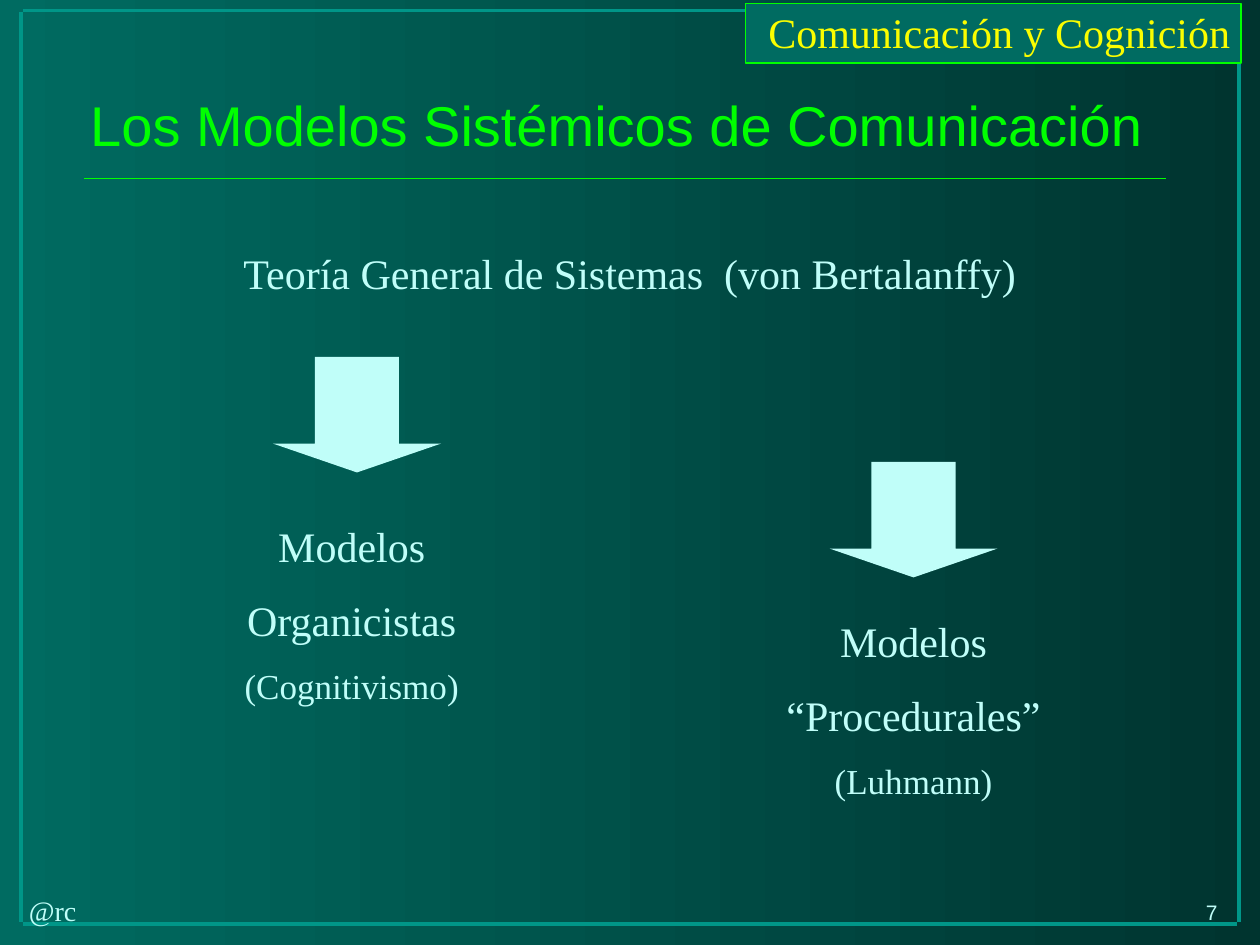
import pptx
import pptx.dml.color
import pptx.enum.shapes
import pptx.enum.text
import pptx.oxml
import pptx.oxml.ns
import pptx.util

Pt = pptx.util.Pt
ALIGN = pptx.enum.text.PP_ALIGN
SHAPES = pptx.enum.shapes.MSO_SHAPE

TEAL, DARK, FRAME = "006B61", "00342F", "009688"
PALE, GREEN, YELLOW = "C0FEF9", "00FF00", "FAFD00"
SERIF, SANS = "Times New Roman", "Arial"

TITLE = "Los Modelos Sistémicos de Comunicación "
THEORY = "Teoría General de Sistemas  (von Bertalanffy)"
BANNER = "Comunicación y Cognición"

# Left, top, width, height of each text
TITLE_BOX = (36, 48, 642, 90)
THEORY_BOX = (84, 138, 552, 36)
BANNER_BOX = (432, 0, 291, 36)
BANNER_PANEL = (426, 2, 283, 34)

# Lines of text, text box, left and top of the arrow
MODELS = [
    ([("Modelos", 24), ("“Procedurales”", 24), ("(Luhmann)", 20)],
     (438, 348, 168, 115), (474, 264)),
    ([("Modelos", 24), ("Organicistas", 24), ("(Cognitivismo)", 20)],
     (108, 294, 186, 115), (156, 204)),
]
ARROW_SIZE = (96, 66)

# Text, box, size, font
FOOTERS = [
    ("7", (682, 510.5, 35, 22), 12, SANS),
    ("@rc", (9.5, 507, 42, 26), 16, SERIF),
]

# Start x, start y, end x, end y, colour, weight
LINES = [
    (12, 7, 12, 527, FRAME, 2),
    (13, 528, 707, 528, FRAME, 2),
    (13, 6, 707, 6, FRAME, 2),
    (708, 7, 708, 527, FRAME, 2),
    (48, 102, 666, 102, GREEN, 1),
]


def color(hex_text):
    return pptx.dml.color.RGBColor.from_string(hex_text)


def points(values):
    return [Pt(value) for value in values]


def set_font(paragraph, size, name, hex_text):
    paragraph.font.size = Pt(size)
    paragraph.font.name = name
    paragraph.font.color.rgb = color(hex_text)


def add_text(slide, box, lines, name=SERIF, hex_text=PALE,
             alignment=ALIGN.LEFT, wrap=True):
    """Add a text box from (text, size) lines, spaced by half a line."""
    frame = slide.shapes.add_textbox(*points(box)).text_frame
    frame.word_wrap = wrap
    for index, (text, size) in enumerate(lines):
        paragraph = frame.add_paragraph() if index else frame.paragraphs[0]
        paragraph.text = text
        paragraph.alignment = alignment
        if index:
            paragraph.space_before = Pt(round(size * 0.56, 1))
        set_font(paragraph, size, name, hex_text)


def add_shape(slide, kind, box, fill):
    shape = slide.shapes.add_shape(kind, *points(box))
    shape.shadow.inherit = False
    shape.fill.solid()
    shape.fill.fore_color.rgb = color(fill)
    shape.line.fill.background()
    return shape


def add_line(slide, ends, hex_text, weight):
    line = slide.shapes.add_connector(
        pptx.enum.shapes.MSO_CONNECTOR.STRAIGHT, *points(ends))
    line.line.color.rgb = color(hex_text)
    line.line.width = Pt(weight)
    line._element.spPr.append(
        pptx.oxml.parse_xml(f"<a:effectLst {pptx.oxml.ns.nsdecls('a')}/>"))


def set_background(slide):
    fill = slide.background.fill
    fill.gradient()
    fill.gradient_angle = 0
    for stop, hex_text in zip(fill.gradient_stops, (TEAL, DARK)):
        stop.color.rgb = color(hex_text)


def set_title(slide):
    title = slide.shapes.title
    title.left, title.top, title.width, title.height = points(TITLE_BOX)
    frame = title.text_frame
    frame.text = TITLE
    frame.vertical_anchor = pptx.enum.text.MSO_ANCHOR.TOP
    frame.auto_size = pptx.enum.text.MSO_AUTO_SIZE.NONE
    frame.paragraphs[0].alignment = ALIGN.CENTER
    set_font(frame.paragraphs[0], 32, SANS, GREEN)


def main():
    presentation = pptx.Presentation()
    presentation.slide_width, presentation.slide_height = Pt(720), Pt(540)
    slide = presentation.slides.add_slide(presentation.slide_layouts[5])
    set_background(slide)
    set_title(slide)

    for *ends, hex_text, weight in LINES:
        add_line(slide, ends, hex_text, weight)
    for text, box, size, name in FOOTERS:
        add_text(slide, box, [(text, size)], name, wrap=False)

    panel = add_shape(slide, SHAPES.RECTANGLE, BANNER_PANEL, TEAL)
    panel.line.color.rgb = color(GREEN)
    panel.line.width = Pt(1)
    add_text(slide, BANNER_BOX, [(BANNER, 24)], hex_text=YELLOW)

    for lines, box, corner in MODELS:
        arrow = add_shape(slide, SHAPES.DOWN_ARROW, corner + ARROW_SIZE, PALE)
        arrow.adjustments[0] = 0.5
        # The head length is relative to the shorter side
        arrow.adjustments[1] = 0.25
        add_text(slide, box, lines, alignment=ALIGN.CENTER)
    add_text(slide, THEORY_BOX, [(THEORY, 24)], alignment=ALIGN.CENTER)

    presentation.save("out.pptx")


if __name__ == "__main__":
    main()
